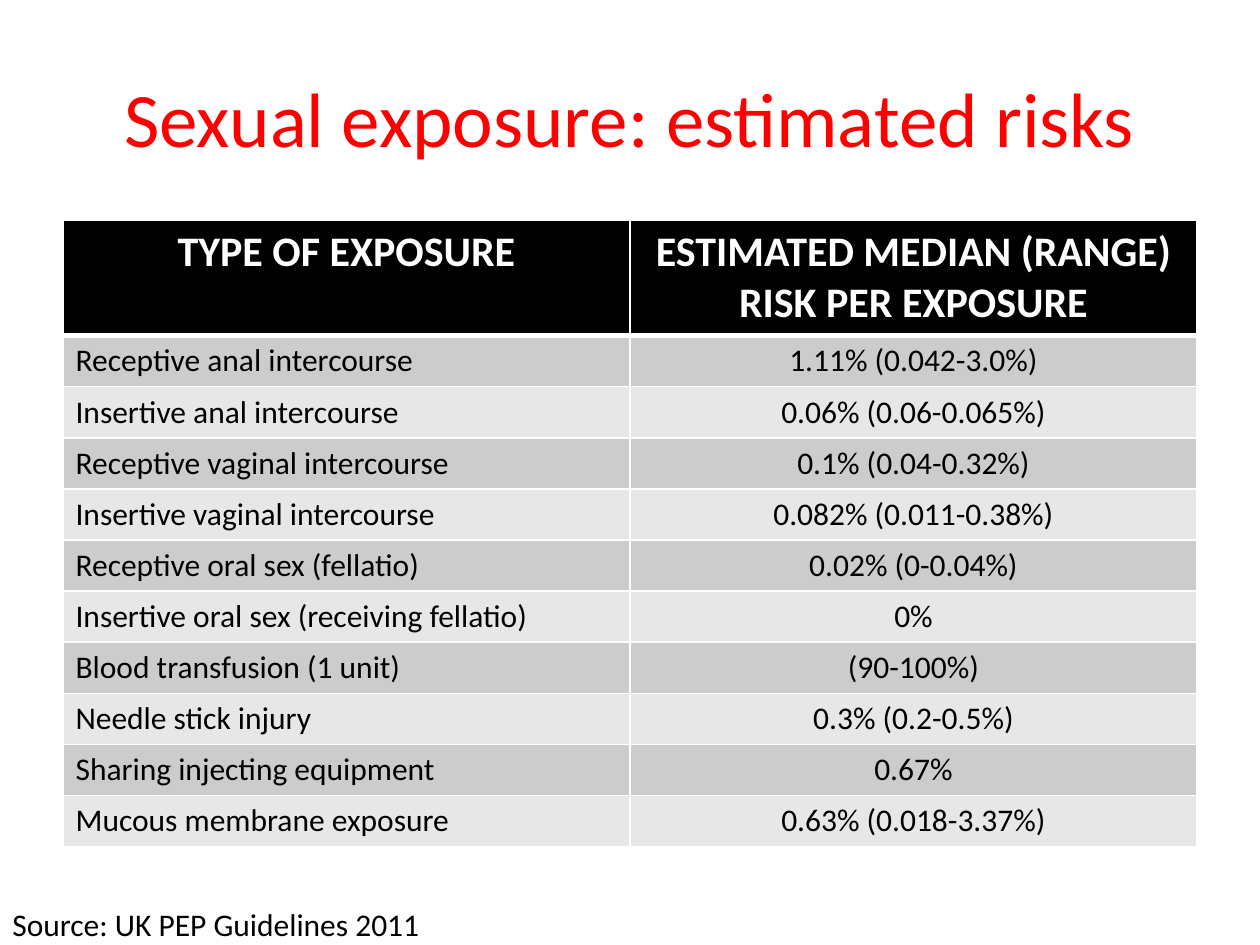
from lxml.etree import SubElement
from pptx import Presentation
from pptx.dml.color import RGBColor
from pptx.enum.text import MSO_ANCHOR as Anchor, PP_ALIGN as Align
from pptx.oxml.ns import qn
from pptx.util import Inches, Pt

COLORS = {
    "title": "FF0000",
    "header": "000000",
    "odd": "CCCCCC",
    "even": "E7E7E7",
    "text": "000000",
    "light": "FFFFFF",
}

HEADINGS = ("TYPE OF EXPOSURE", "ESTIMATED MEDIAN (RANGE) RISK PER EXPOSURE")
RISKS = [
    ("Receptive anal intercourse", "1.11% (0.042-3.0%)"),
    ("Insertive anal intercourse", "0.06% (0.06-0.065%)"),
    ("Receptive vaginal intercourse", "0.1% (0.04-0.32%)"),
    ("Insertive vaginal intercourse", "0.082% (0.011-0.38%)"),
    ("Receptive oral sex (fellatio)", "0.02% (0-0.04%)"),
    ("Insertive oral sex (receiving fellatio)", "0%"),
    ("Blood transfusion (1 unit)", "(90-100%)"),
    ("Needle stick injury", "0.3% (0.2-0.5%)"),
    ("Sharing injecting equipment", "0.67%"),
    ("Mucous membrane exposure", "0.63% (0.018-3.37%)"),
]


class SlideBuilder:
    font = "Calibri"
    columns, rows = 20, 30

    def __init__(self, deck):
        self.unit_x = deck.slide_width / self.columns
        self.unit_y = deck.slide_height / self.rows
        self.page = deck.slides.add_slide(deck.slide_layouts[5])

    def place(self, left, top, width, height):
        units = (self.unit_x, self.unit_y) * 2
        return [round(n * unit) for n, unit in zip((left, top, width, height), units)]

    def add_text(self, frame, text, size, color, align=Align.LEFT, bold=False):
        para = frame.paragraphs[0]
        para.alignment = align
        span = para.add_run()
        span.text = text
        formats = {"name": self.font, "size": Pt(size), "bold": bold}
        for name, value in formats.items():
            setattr(span.font, name, value)
        span.font.color.rgb = RGBColor.from_string(COLORS[color])

    def title(self, text, *area):
        box = self.page.shapes.title
        for name, value in zip(("left", "top", "width", "height"), self.place(*area)):
            setattr(box, name, value)
        box.text_frame.vertical_anchor = Anchor.MIDDLE
        self.add_text(box.text_frame, text, 44, "title", Align.CENTER)

    def label(self, text, *area):
        box = self.page.shapes.add_textbox(*self.place(*area))
        box.text_frame.word_wrap = False
        self.add_text(box.text_frame, text, 18, "text")

    def borders(self, cell, widths):
        properties = cell._tc.get_or_add_tcPr()
        for side, width in widths.items():
            line = SubElement(properties, qn(f"a:ln{side}"), w=str(Pt(width)))
            fill = SubElement(line, qn("a:solidFill"))
            SubElement(fill, qn("a:srgbClr"), val=COLORS["light"])

    def table(self, records, *area):
        shape = self.page.shapes.add_table(len(records), len(records[0]), *self.place(*area))
        table = shape.table
        table.horz_banding = False
        table.first_row = True
        for row, record in enumerate(records):
            header = row == 0
            band = "header" if header else ("even", "odd")[row % 2]
            size, color = (24, "light") if header else (18, "text")
            widths = {"L": 1, "R": 1, "T": 3 if row == 1 else 1, "B": 3 if header else 1}
            for column, text in enumerate(record):
                cell = table.cell(row, column)
                self.borders(cell, widths)
                cell.fill.solid()
                cell.fill.fore_color.rgb = RGBColor.from_string(COLORS[band])
                align = Align.CENTER if header or column else Align.LEFT
                self.add_text(cell.text_frame, text, size, color, align, header)


def main():
    deck = Presentation()
    deck.slide_width, deck.slide_height = Inches(10), Inches(7.5)
    slide = SlideBuilder(deck)
    slide.title("Sexual exposure: estimated risks", 1, 1.2, 18, 5)
    slide.table([HEADINGS, *RISKS], 1, 7, 18, 17.85)
    slide.label("Source: UK PEP Guidelines 2011", 0, 28.55, 6.94, 1.6)
    deck.save("out.pptx")


if __name__ == "__main__":
    main()
